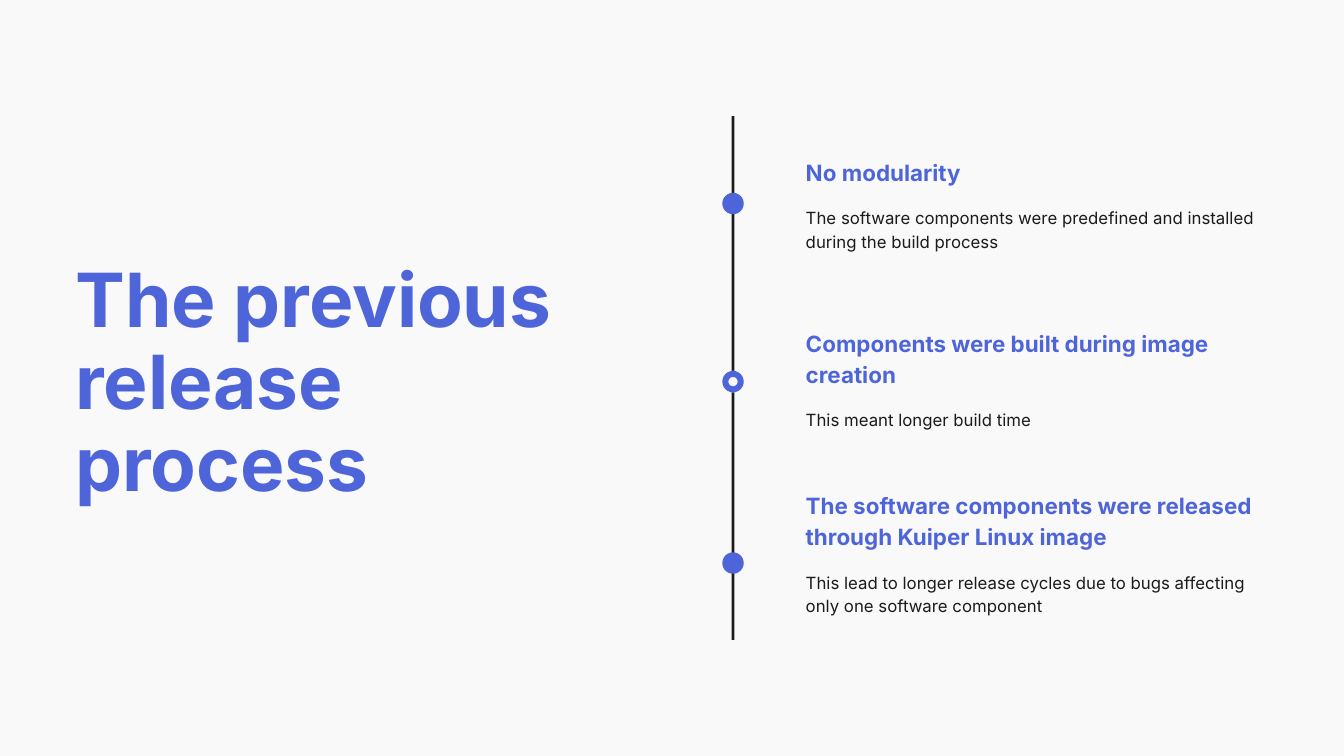
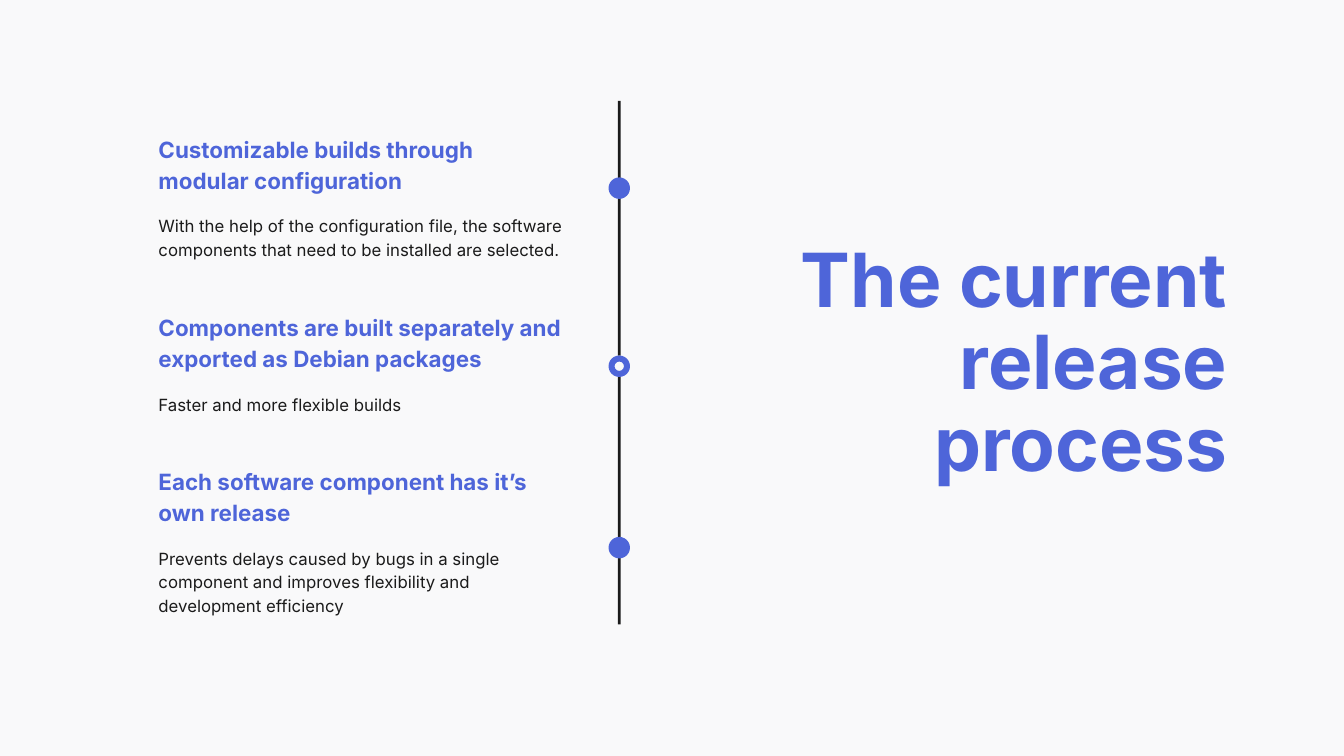
from dataclasses import dataclass

from pptx import Presentation
from pptx.dml.color import RGBColor
from pptx.enum.shapes import MSO_SHAPE
from pptx.enum.text import MSO_ANCHOR, MSO_AUTO_SIZE, PP_ALIGN
from pptx.shapes.autoshape import Shape
from pptx.slide import Slide
from pptx.text.text import TextFrame
from pptx.util import Pt

BLUE = "4E65D9"
INK = "1B1B1B"
PAPER = "F9F9FA"
FONT = "Inter"

AXIS_WIDTH, AXIS_HEIGHT = 2.9, 561
MARKER_SIZE = 23
MARKER_OFFSETS = (93.6, 284.4, 478.8)  # centres, measured from the top of the axis
RING_THICKNESS = 0.28  # share of the marker's size
HEADING_BODY_GAP = 20


@dataclass(frozen=True)
class TextStyle:
    size: float
    line: float
    color: str
    bold: bool


TITLE = TextStyle(80, 88, BLUE, True)
HEADING = TextStyle(24, 33.6, BLUE, True)
BODY = TextStyle(18, 25.2, INK, False)


@dataclass(frozen=True)
class Step:
    top: float
    heading: str
    heading_lines: int
    body: str
    body_lines: int


@dataclass(frozen=True)
class Timeline:
    title: str
    title_box: tuple[float, float, float, float]
    title_align: PP_ALIGN
    axis_x: float
    axis_top: float
    steps_left: float
    steps_width: float
    steps: tuple[Step, ...]


TIMELINES = (
    Timeline(
        "The previous release process", (80.6, 278.6, 549.4, 265), PP_ALIGN.LEFT,
        785.4, 124.5, 863.3, 481,
        (
            Step(165.6, "No modularity", 1,
                 "The software components were predefined and installed during the build process", 2),
            Step(348.5, "Components were built during image creation", 2,
                 "This meant longer build time", 1),
            Step(522.5, "The software components were released through Kuiper Linux image", 2,
                 "This lead to longer release cycles due to bugs affecting only one software component", 2),
        ),
    ),
    Timeline(
        "The current release process", (828.7, 257, 486.7, 266), PP_ALIGN.RIGHT,
        663.5, 108, 169.8, 436.3,
        (
            Step(140.5, "Customizable builds through modular configuration", 2,
                 "With the help of the configuration file, the software components "
                 "that need to be installed are selected.", 2),
            Step(331.6, "Components are built separately and exported as Debian packages", 2,
                 "Faster and more flexible builds", 1),
            Step(496.8, "Each software component has it’s own release", 2,
                 "Prevents delays caused by bugs in a single component and improves "
                 "flexibility and development efficiency", 3),
        ),
    ),
)


def rgb(color: str) -> RGBColor:
    return RGBColor.from_string(color)


def write(frame: TextFrame, text: str, style: TextStyle, align: PP_ALIGN = PP_ALIGN.LEFT) -> None:
    frame.margin_left = frame.margin_top = frame.margin_right = frame.margin_bottom = 0
    frame.word_wrap = True
    frame.auto_size = MSO_AUTO_SIZE.NONE
    frame.vertical_anchor = MSO_ANCHOR.TOP
    frame.text = text
    paragraph = frame.paragraphs[0]
    paragraph.alignment = align
    paragraph.line_spacing = Pt(style.line)
    paragraph.font.name = FONT
    paragraph.font.size = Pt(style.size)
    paragraph.font.bold = style.bold
    paragraph.font.color.rgb = rgb(style.color)


def add_title(slide: Slide, timeline: Timeline) -> None:
    title = slide.shapes.title
    title.left, title.top, title.width, title.height = map(Pt, timeline.title_box)
    write(title.text_frame, timeline.title, TITLE, timeline.title_align)


def add_centred(slide: Slide, kind: MSO_SHAPE, x: float, y: float,
                width: float, height: float, color: str) -> Shape:
    """Draw a plain filled shape around the point x, y."""
    shape = slide.shapes.add_shape(
        kind, Pt(x - width / 2), Pt(y - height / 2), Pt(width), Pt(height))
    shape.shadow.inherit = False
    shape.fill.solid()
    shape.fill.fore_color.rgb = rgb(color)
    shape.line.fill.background()
    return shape


def add_axis(slide: Slide, x: float, top: float) -> None:
    """Draw the vertical axis with a ring between two dots."""
    add_centred(slide, MSO_SHAPE.RECTANGLE, x, top + AXIS_HEIGHT / 2,
                AXIS_WIDTH, AXIS_HEIGHT, INK)
    first, middle, last = (top + offset for offset in MARKER_OFFSETS)
    for y, color in ((first, BLUE), (last, BLUE), (middle, PAPER)):
        add_centred(slide, MSO_SHAPE.OVAL, x, y, MARKER_SIZE, MARKER_SIZE, color)
    ring = add_centred(slide, MSO_SHAPE.DONUT, x, middle, MARKER_SIZE, MARKER_SIZE, BLUE)
    ring.adjustments[0] = RING_THICKNESS


def add_step(slide: Slide, step: Step, left: float, width: float) -> None:
    top = step.top
    for text, lines, style in ((step.heading, step.heading_lines, HEADING),
                               (step.body, step.body_lines, BODY)):
        height = lines * style.line
        box = slide.shapes.add_textbox(Pt(left), Pt(top), Pt(width), Pt(height))
        write(box.text_frame, text, style)
        top += height + HEADING_BODY_GAP


def main() -> None:
    deck = Presentation()
    deck.slide_width, deck.slide_height = Pt(1440), Pt(810)
    backdrop = deck.slide_master.background.fill
    backdrop.solid()
    backdrop.fore_color.rgb = rgb(PAPER)
    title_only = deck.slide_layouts.get_by_name("Title Only")

    for timeline in TIMELINES:
        slide = deck.slides.add_slide(title_only)
        add_title(slide, timeline)
        add_axis(slide, timeline.axis_x, timeline.axis_top)
        for step in timeline.steps:
            add_step(slide, step, timeline.steps_left, timeline.steps_width)

    deck.save("out.pptx")


if __name__ == "__main__":
    main()
